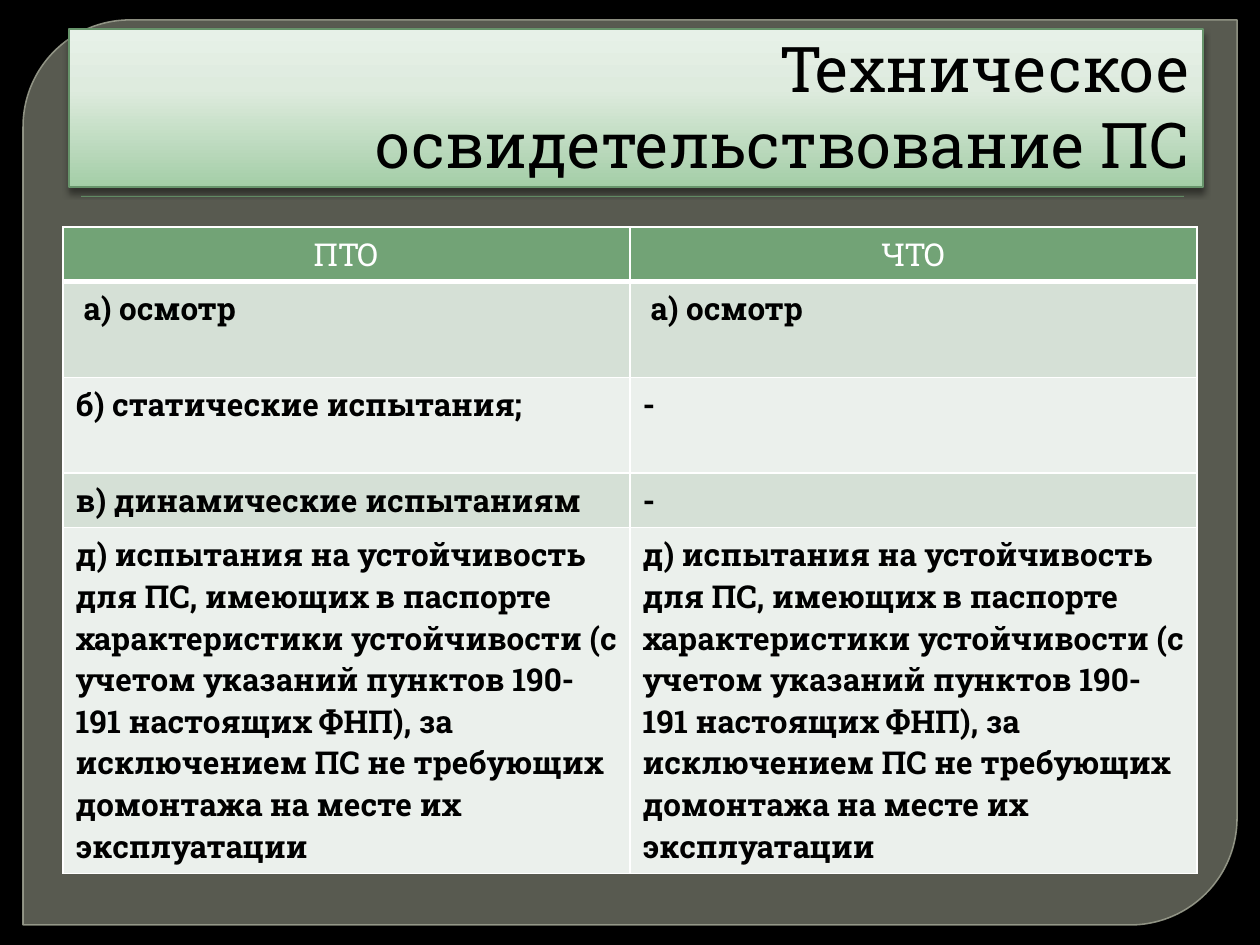
"""Build the slide on technical inspection of lifting equipment."""
from dataclasses import dataclass

from lxml.etree import SubElement
from pptx import Presentation
from pptx.dml.color import RGBColor
from pptx.enum.shapes import MSO_SHAPE as Preset
from pptx.enum.text import MSO_ANCHOR as Anchor, MSO_AUTO_SIZE as AutoSize, PP_ALIGN as Align
from pptx.oxml.ns import qn
from pptx.util import Emu, Pt

SCALE = 914400 / 126
FONT = "Roboto Slab"
BLACK = RGBColor(0x00, 0x00, 0x00)
WHITE = RGBColor(0xFF, 0xFF, 0xFF)
PANEL = RGBColor(0x88, 0x8B, 0x7B)
PANEL_EDGE = RGBColor(0x9D, 0xA0, 0x90)
GREEN = RGBColor(0x72, 0xA3, 0x76)
TITLE_EDGE = RGBColor(0x67, 0x94, 0x6B)
BAND_DARK = RGBColor(0xD5, 0xE0, 0xD6)
BAND_LIGHT = RGBColor(0xEB, 0xF0, 0xEC)
TITLE_STOPS = (
    (0, RGBColor(0xA4, 0xCE, 0xA7)),
    (62, RGBColor(0xDE, 0xEB, 0xDE)),
    (100, RGBColor(0xE7, 0xF1, 0xE8)),
)
STABILITY = (
    "д) испытания на устойчивость для ПС, имеющих в паспорте характеристики "
    "устойчивости (с учетом указаний пунктов 190-191 настоящих ФНП), "
    "за исключением ПС не требующих домонтажа на месте их эксплуатации"
)


@dataclass(frozen=True)
class Box:
    left: int
    top: int
    width: int
    height: int


@dataclass(frozen=True)
class Row:
    height: int
    texts: tuple[str, str]


ROWS = (
    Row(54, ("ПТО", "ЧТО")),
    Row(96, (" а) осмотр", " а) осмотр")),
    Row(96, ("б) статические испытания;", "-")),
    Row(54, ("в) динамические испытаниям", "-")),
    Row(346, (STABILITY, STABILITY)),
)


def px(length: int) -> Emu:
    """Turn pixels into EMU."""
    return Emu(round(length * SCALE))


def frame(box: Box) -> tuple[Emu, Emu, Emu, Emu]:
    """Return the position and size of a box in EMU."""
    return px(box.left), px(box.top), px(box.width), px(box.height)


def add_color(parent, color: RGBColor, alpha: int = 100) -> None:
    """Append a colour element with its opacity in percent."""
    element = SubElement(parent, qn("a:srgbClr"), val=str(color))
    if alpha < 100:
        SubElement(element, qn("a:alpha"), val=str(alpha * 1000))


def set_alpha(fill_owner, alpha: int) -> None:
    """Set the opacity of the first solid colour under an element."""
    color = fill_owner.find(f"{qn('a:solidFill')}/{qn('a:srgbClr')}")
    SubElement(color, qn("a:alpha"), val=str(alpha * 1000))


def add_shadow(shape, alpha: int, blur: float, distance: float) -> None:
    """Give a shape a black shadow that falls downwards."""
    shape.shadow.inherit = False
    effects = shape._element.spPr.find(qn("a:effectLst"))
    shadow = SubElement(effects, qn("a:outerShdw"), blurRad=str(Pt(blur)),
                        dist=str(Pt(distance)), dir="5400000", rotWithShape="0")
    add_color(shadow, BLACK, alpha)


def add_text(para, text: str, size: int, color: RGBColor, bold: bool, align: Align) -> None:
    """Add one formatted run to a paragraph."""
    para.alignment = align
    span = para.add_run()
    span.text = text
    span.font.name, span.font.size, span.font.bold = FONT, Pt(size), bold
    span.font.color.rgb = color


def draw_panel(page, box: Box) -> None:
    """Draw the translucent panel with two rounded corners."""
    panel = page.shapes.add_shape(Preset.ROUND_2_DIAG_RECTANGLE, *frame(box))
    panel.adjustments[0], panel.adjustments[1] = 0.118, 0
    panel.shadow.inherit = False
    panel.fill.solid()
    panel.fill.fore_color.rgb = PANEL
    panel.line.color.rgb = PANEL_EDGE
    panel.line.width = Pt(0.87)
    properties = panel._element.spPr
    set_alpha(properties, 65)
    set_alpha(properties.find(qn("a:ln")), 88)


def draw_rule(page, box: Box) -> None:
    """Draw the thin bar below the title."""
    rule = page.shapes.add_shape(Preset.RECTANGLE, *frame(box))
    rule.fill.solid()
    rule.fill.fore_color.rgb = GREEN
    rule.line.fill.background()
    add_shadow(rule, 75, 1, 1)


def draw_title(page, box: Box, text: str) -> None:
    """Format the title placeholder and bring it to the front."""
    title = page.shapes.title
    title.left, title.top, title.width, title.height = frame(box)
    title.fill.gradient()
    title.fill.gradient_angle = 90
    stops = title._element.spPr.find(f"{qn('a:gradFill')}/{qn('a:gsLst')}")
    for stop in list(stops):
        stops.remove(stop)
    for position, color in TITLE_STOPS:
        add_color(SubElement(stops, qn("a:gs"), pos=str(position * 1000)), color)
    title.line.color.rgb = TITLE_EDGE
    title.line.width = Pt(0.75)
    add_shadow(title, 43, 4, 3)
    body = title.text_frame
    body.word_wrap, body.auto_size = True, AutoSize.NONE
    body.vertical_anchor = Anchor.BOTTOM
    add_text(body.paragraphs[0], text, 36, BLACK, False, Align.RIGHT)
    title._element.getparent().append(title._element)


def set_borders(cell, top: int, bottom: int) -> None:
    """Draw white cell borders, with top and bottom widths in points."""
    properties = cell._tc.get_or_add_tcPr()
    for side, width in (("L", 1), ("R", 1), ("T", top), ("B", bottom)):
        line = SubElement(properties, qn(f"a:ln{side}"), w=str(Pt(width)))
        add_color(SubElement(line, qn("a:solidFill")), WHITE)


def draw_table(page, box: Box, rows: tuple[Row, ...]) -> None:
    """Draw the comparison table with a header and banded rows."""
    table = page.shapes.add_table(len(rows), 2, *frame(box)).table
    table.first_row = table.horz_banding = False
    for index, row in enumerate(rows):
        table.rows[index].height = px(row.height)
        header = index == 0
        for column, text in enumerate(row.texts):
            cell = table.cell(index, column)
            set_borders(cell, 3 if index == 1 else 1, 3 if header else 1)
            cell.fill.solid()
            cell.fill.fore_color.rgb = GREEN if header else (BAND_LIGHT, BAND_DARK)[index % 2]
            add_text(cell.text_frame.paragraphs[0], text, 18, WHITE if header else BLACK,
                     not header, Align.CENTER if header else Align.LEFT)


def main() -> None:
    """Build and save the deck."""
    deck = Presentation()
    deck.slide_width, deck.slide_height = px(1260), px(945)
    page = deck.slides.add_slide(deck.slide_layouts[5])
    page.background.fill.solid()
    page.background.fill.fore_color.rgb = BLACK
    draw_panel(page, Box(23, 20, 1214, 905))
    draw_rule(page, Box(81, 196, 1103, 1))
    draw_title(page, Box(69, 29, 1134, 158), "Техническое освидетельствование ПС")
    draw_table(page, Box(63, 227, 1134, sum(row.height for row in ROWS)), ROWS)
    deck.save("out.pptx")


if __name__ == "__main__":
    main()
